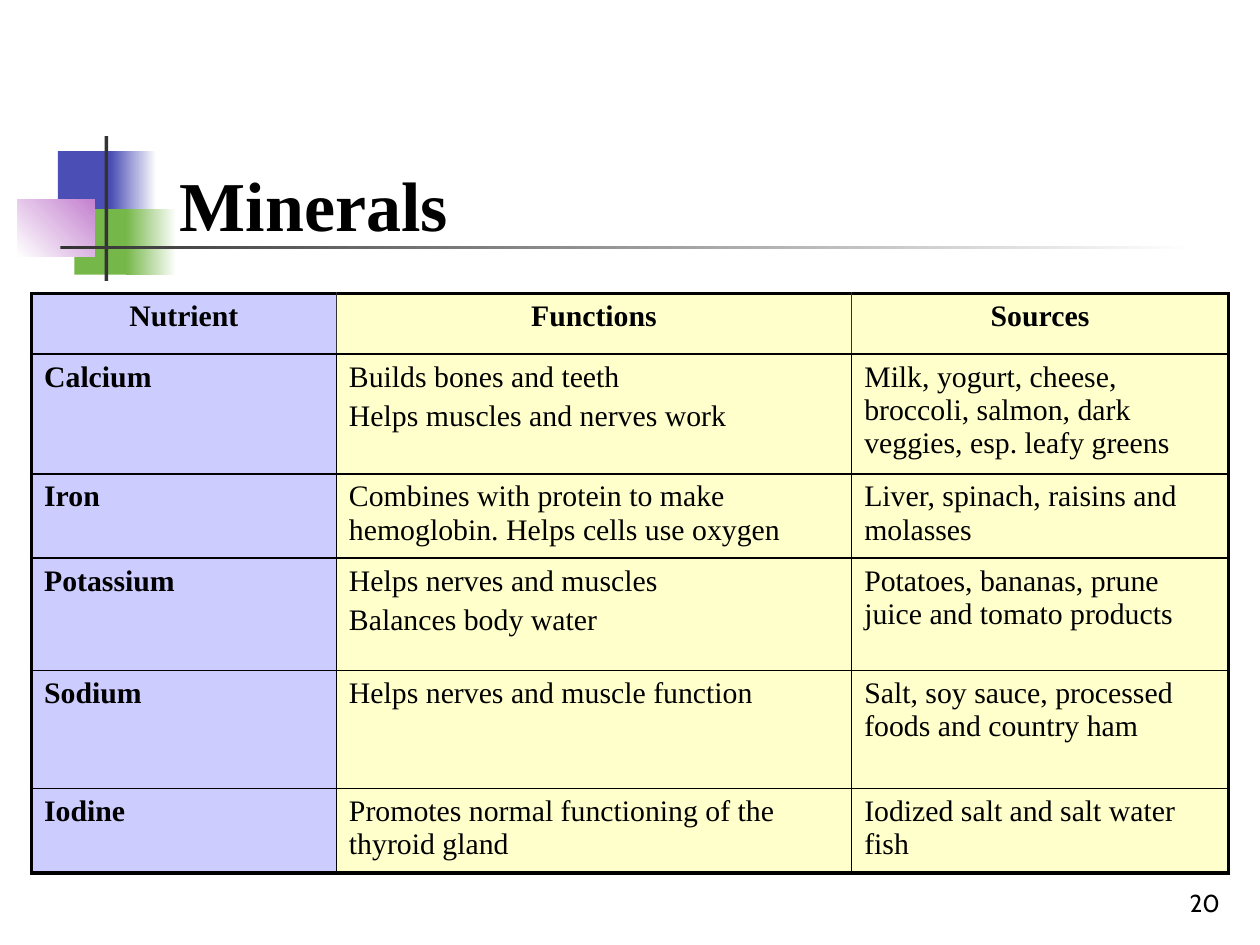
from dataclasses import dataclass

from lxml.etree import SubElement
from pptx import Presentation
from pptx.dml.color import RGBColor
from pptx.enum.shapes import MSO_SHAPE
from pptx.enum.text import MSO_ANCHOR, PP_ALIGN
from pptx.oxml.ns import qn
from pptx.util import Inches, Pt


@dataclass(frozen=True)
class Theme:
    black: str = "000000"
    white: str = "FFFFFF"
    charcoal: str = "333333"
    blue: str = "4B4EB5"
    green: str = "76B749"
    orchid: str = "C481CF"
    lavender: str = "CCCCFF"
    cream: str = "FFFFCC"
    serif: str = "Times New Roman"
    sans: str = "Cabin"
    title_size: float = 40
    table_size: float = 17
    number_size: float = 14
    thin: float = 1
    thick: float = 2.25


THEME = Theme()
COLUMN_WIDTHS = [2.42, 4.09, 2.99]
ROW_HEIGHTS = [0.48, 0.95, 0.67, 0.89, 0.94, 0.67]
ROWS = [
    ["Nutrient", "Functions", "Sources"],
    ["Calcium", "Builds bones and teeth\nHelps muscles and nerves work",
     "Milk, yogurt, cheese, broccoli, salmon, dark veggies, esp. leafy greens"],
    ["Iron", "Combines with protein to make hemoglobin. Helps cells use oxygen",
     "Liver, spinach, raisins and molasses"],
    ["Potassium", "Helps nerves and muscles\nBalances body water",
     "Potatoes, bananas, prune juice and tomato products"],
    ["Sodium", "Helps nerves and muscle function",
     "Salt, soy sauce, processed foods and country ham"],
    ["Iodine", "Promotes normal functioning of the thyroid gland",
     "Iodized salt and salt water fish"],
]


def style_paragraph(paragraph, size, font_name, bold=False, alignment=PP_ALIGN.LEFT):
    paragraph.alignment = alignment
    for run in paragraph.runs:
        run.font.size = Pt(size)
        run.font.name = font_name
        run.font.bold = bold
        run.font.color.rgb = RGBColor.from_string(THEME.black)


def add_block(slide, left, top, width, height, start, end=None, angle=0):
    shape = slide.shapes.add_shape(
        MSO_SHAPE.RECTANGLE, Inches(left), Inches(top), Inches(width), Inches(height))
    shape.shadow.inherit = False
    shape.line.fill.background()
    if end is None:
        shape.fill.solid()
        shape.fill.fore_color.rgb = RGBColor.from_string(start)
        return
    shape.fill.gradient()
    shape.fill.gradient_angle = angle
    for stop, color in zip(shape.fill.gradient_stops, (start, end)):
        stop.color.rgb = RGBColor.from_string(color)


def add_ornament(slide, left, top):
    blocks = [
        (0.32, 0.12, 0.48, 0.52, THEME.blue),
        (0.74, 0.12, 0.36, 0.52, THEME.blue, THEME.white),
        (0.45, 0.58, 0.46, 0.52, THEME.green),
        (0.86, 0.58, 0.4, 0.52, THEME.green, THEME.white),
        (0, 0.5, 0.61, 0.46, THEME.white, THEME.orchid, 45),
        (0.69, 0, 0.03, 1.15, THEME.charcoal),
        (0.34, 0.87, 9, 0.03, THEME.charcoal, THEME.white),
    ]
    for x, y, width, height, *colors in blocks:
        add_block(slide, left + x, top + y, width, height, *colors)


def add_label(slide, left, top, width, height, text, **style):
    shape = slide.shapes.add_textbox(
        Inches(left), Inches(top), Inches(width), Inches(height))
    text_frame = shape.text_frame
    text_frame.word_wrap = True
    text_frame.vertical_anchor = MSO_ANCHOR.BOTTOM
    text_frame.text = text
    style_paragraph(text_frame.paragraphs[0], **style)


def set_border(cell, side, color, width):
    properties = cell._tc.get_or_add_tcPr()
    line = SubElement(properties, qn(f"a:ln{side}"), w=str(Pt(width)))
    fill = SubElement(line, qn("a:solidFill"))
    SubElement(fill, qn("a:srgbClr"), val=color)


def style_cell(cell, row, column):
    last_row, last_column = len(ROWS) - 1, len(COLUMN_WIDTHS) - 1
    outer_sides = {"L": column == 0, "R": column == last_column,
                   "T": row == 0, "B": row == last_row}
    for side, outer in outer_sides.items():
        header_divider = row == 0 and side in "LR" and not outer
        set_border(cell, side, THEME.charcoal if header_divider else THEME.black,
                   THEME.thick if outer else THEME.thin)
    cell.fill.solid()
    cell.fill.fore_color.rgb = RGBColor.from_string(
        THEME.lavender if column == 0 else THEME.cream)
    for paragraph in cell.text_frame.paragraphs:
        paragraph.space_before = Pt(THEME.table_size * 0.2)
        style_paragraph(paragraph, THEME.table_size, THEME.serif,
                        bold=row == 0 or column == 0,
                        alignment=PP_ALIGN.CENTER if row == 0 else PP_ALIGN.LEFT)


def add_mineral_table(slide, left, top):
    table = slide.shapes.add_table(
        len(ROWS), len(COLUMN_WIDTHS), Inches(left), Inches(top),
        Inches(sum(COLUMN_WIDTHS)), Inches(sum(ROW_HEIGHTS))).table
    table.first_row = table.horz_banding = False
    for column, width in zip(table.columns, COLUMN_WIDTHS):
        column.width = Inches(width)
    for row, height in zip(table.rows, ROW_HEIGHTS):
        row.height = Inches(height)
    for row, texts in enumerate(ROWS):
        for column, text in enumerate(texts):
            cell = table.cell(row, column)
            cell.text_frame.text = text
            style_cell(cell, row, column)


def main():
    presentation = Presentation()
    presentation.slide_width = Inches(10)
    presentation.slide_height = Inches(7.5)
    slide = presentation.slides.add_slide(presentation.slide_layouts[6])
    add_ornament(slide, 0.14, 1.08)
    add_label(slide, 7.7, 6.83, 2.08, 0.5, "20", size=THEME.number_size,
              font_name=THEME.sans, alignment=PP_ALIGN.RIGHT)
    add_label(slide, 1.33, 0.25, 8.67, 1.75, "Minerals", size=THEME.title_size,
              font_name=THEME.serif, bold=True)
    add_mineral_table(slide, 0.25, 2.33)
    presentation.save("out.pptx")


if __name__ == "__main__":
    main()
